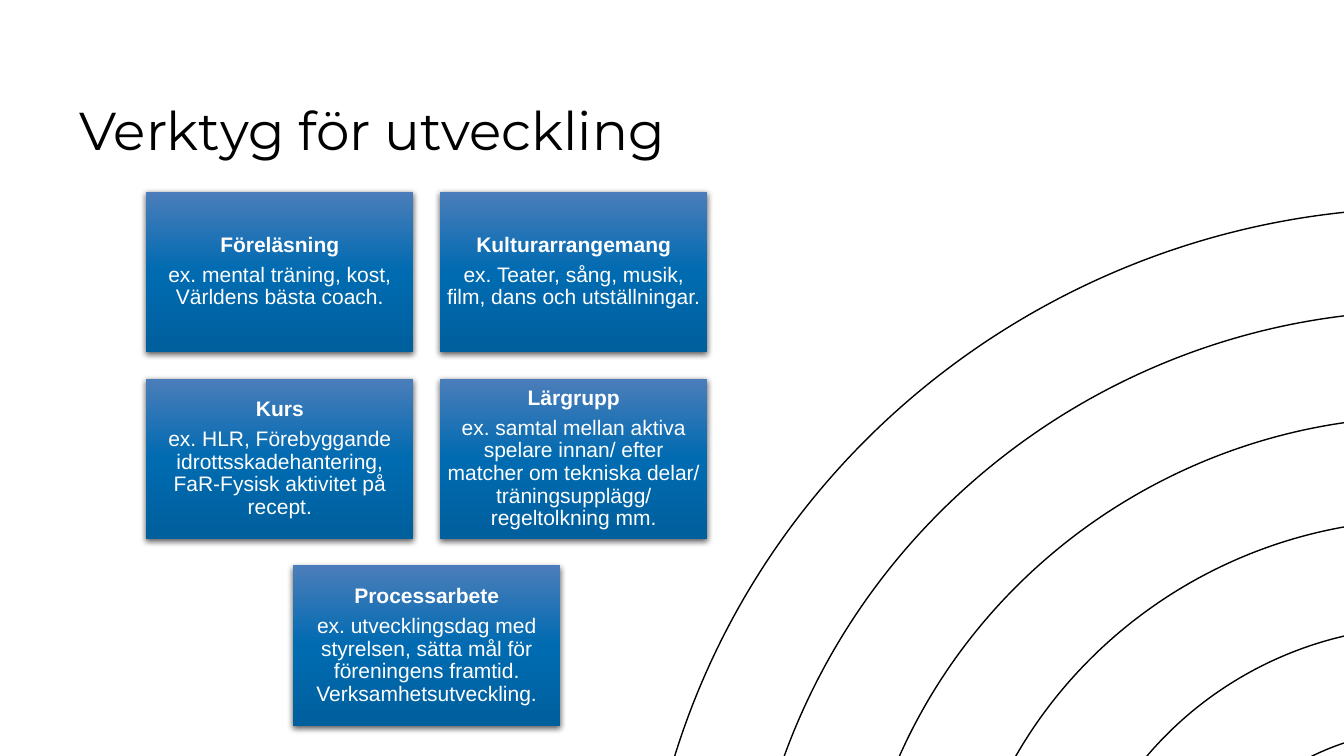
"""Build the slide 'Verktyg för utveckling': five tool cards beside concentric arcs."""
from math import cos, radians, sin

from lxml.etree import SubElement
from pptx import Presentation
from pptx.dml.color import RGBColor
from pptx.enum.shapes import MSO_SHAPE
from pptx.enum.text import MSO_ANCHOR, MSO_AUTO_SIZE, PP_ALIGN
from pptx.oxml import parse_xml
from pptx.oxml.ns import nsdecls, qn
from pptx.util import Inches, Pt

TITLE = "Verktyg för utveckling"
ROWS = [
    [("Föreläsning", "ex. mental träning, kost, Världens bästa coach."),
     ("Kulturarrangemang", "ex. Teater, sång, musik, film, dans och utställningar.")],
    [("Kurs", "ex. HLR, Förebyggande idrottsskadehantering, FaR-Fysisk aktivitet på recept."),
     ("Lärgrupp", "ex. samtal mellan aktiva spelare innan/ efter matcher om tekniska delar/ "
                  "träningsupplägg/ regeltolkning mm.")],
    [("Processarbete", "ex. utvecklingsdag med styrelsen, sätta mål för föreningens framtid. "
                       "Verksamhetsutveckling.")],
]

BLACK = RGBColor(0x00, 0x00, 0x00)
WHITE = RGBColor(0xFF, 0xFF, 0xFF)
CARD_STOPS = [(0, RGBColor(0x4B, 0x7D, 0xBA)),
              (50, RGBColor(0x00, 0x6B, 0xB1)),
              (100, RGBColor(0x00, 0x5F, 0x9D))]

SLIDE_W, SLIDE_H = 13.33, 7.5
GRID_LEFT, GRID_TOP = 1.45, 1.9
CARD_W, CARD_H = 2.65, 1.59
GAP = CARD_W / 10
COLS = 2
ARC_X, ARC_Y = 14.17, 9.82
ARC_TURN = 195.4
ARC_WIDTHS = [7.83, 6.8, 5.74, 4.71, 3.64, 2.61]
ARC_ASPECT = 0.99
BEZIER = 0.55


def add_arc(slide, width):
    """Draw a quarter ellipse turned about the common centre of the arcs."""
    height = width * ARC_ASPECT
    turn = radians(ARC_TURN)
    mid_x = ARC_X + (width * cos(turn) - height * sin(turn)) / 2
    mid_y = ARC_Y + (width * sin(turn) + height * cos(turn)) / 2
    left, top = mid_x - width / 2, mid_y - height / 2
    builder = slide.shapes.build_freeform(Inches(left + width), Inches(top))
    builder.add_line_segments([(Inches(left), Inches(top + height))], close=False)
    sp = builder.convert_to_shape()
    line = sp.element.spPr.find(".//" + qn("a:lnTo"))
    curve = parse_xml(f'<a:cubicBezTo {nsdecls("a")}/>')
    for x, y in [(width, height * BEZIER), (width * BEZIER, height), (0, height)]:
        SubElement(curve, qn("a:pt"), x=str(Inches(x)), y=str(Inches(y)))
    line.getparent().replace(line, curve)
    sp.rotation = ARC_TURN
    sp.fill.background()
    sp.line.color.rgb = BLACK
    sp.line.width = Pt(1)
    sp.shadow.inherit = False


def style_card(sp):
    """Give a card its vertical gradient and its soft shadow below."""
    sp.line.fill.background()
    sp.shadow.inherit = False
    sp_pr = sp.element.spPr
    stops = "".join(f'<a:gs pos="{pos * 1000}"><a:srgbClr val="{color}"/></a:gs>'
                    for pos, color in CARD_STOPS)
    sp_pr.find(qn("a:prstGeom")).addnext(parse_xml(
        f'<a:gradFill {nsdecls("a")} rotWithShape="1"><a:gsLst>{stops}</a:gsLst>'
        '<a:lin ang="5400000" scaled="0"/></a:gradFill>'))
    shadow = SubElement(sp_pr.find(qn("a:effectLst")), qn("a:outerShdw"),
                        blurRad=str(Pt(4.5)), dist=str(Pt(1.5)), dir="5400000",
                        algn="ctr", rotWithShape="0")
    color = SubElement(shadow, qn("a:srgbClr"), val=str(BLACK))
    SubElement(color, qn("a:alpha"), val="63000")


def set_margins(tf, margin):
    """Set the same inset on all four sides of a text frame."""
    tf.margin_left = tf.margin_right = tf.margin_top = tf.margin_bottom = Inches(margin)


def add_card(slide, left, top, texts):
    """Add one card with a bold heading and an example."""
    sp = slide.shapes.add_shape(MSO_SHAPE.RECTANGLE, Inches(left), Inches(top),
                                Inches(CARD_W), Inches(CARD_H))
    style_card(sp)
    tf = sp.text_frame
    tf.text = "\n".join(texts)
    tf.word_wrap = True
    tf.vertical_anchor = MSO_ANCHOR.MIDDLE
    set_margins(tf, 0.06)
    for i, p in enumerate(tf.paragraphs):
        p.alignment = PP_ALIGN.CENTER
        p.line_spacing = 0.9
        p.space_after = Pt(5.25)
        font = p.runs[0].font
        font.name, font.size, font.bold = "Arial", Pt(15), i == 0
        font.color.rgb = WHITE


def add_title(slide):
    """Place and format the title placeholder."""
    title = slide.shapes.title
    title.left, title.top = Inches(0.79), Inches(0.47)
    title.width, title.height = Inches(8.46), Inches(1.14)
    tf = title.text_frame
    tf.text = TITLE
    tf.word_wrap = True
    tf.auto_size = MSO_AUTO_SIZE.NONE
    tf.vertical_anchor = MSO_ANCHOR.BOTTOM
    set_margins(tf, 0)
    p = tf.paragraphs[0]
    p.alignment = PP_ALIGN.LEFT
    p.line_spacing = 0.9
    font = p.runs[0].font
    font.name, font.size = "Montserrat", Pt(38)
    font.color.rgb = BLACK


def main():
    """Assemble and save the presentation."""
    prs = Presentation()
    prs.slide_width, prs.slide_height = Inches(SLIDE_W), Inches(SLIDE_H)
    slide = prs.slides.add_slide(prs.slide_layouts[5])
    for width in ARC_WIDTHS:
        add_arc(slide, width)
    add_title(slide)
    for row, cards in enumerate(ROWS):
        indent = (COLS - len(cards)) / 2
        for col, texts in enumerate(cards):
            add_card(slide, GRID_LEFT + (indent + col) * (CARD_W + GAP),
                     GRID_TOP + row * (CARD_H + GAP), texts)
    prs.save("out.pptx")


if __name__ == "__main__":
    main()
